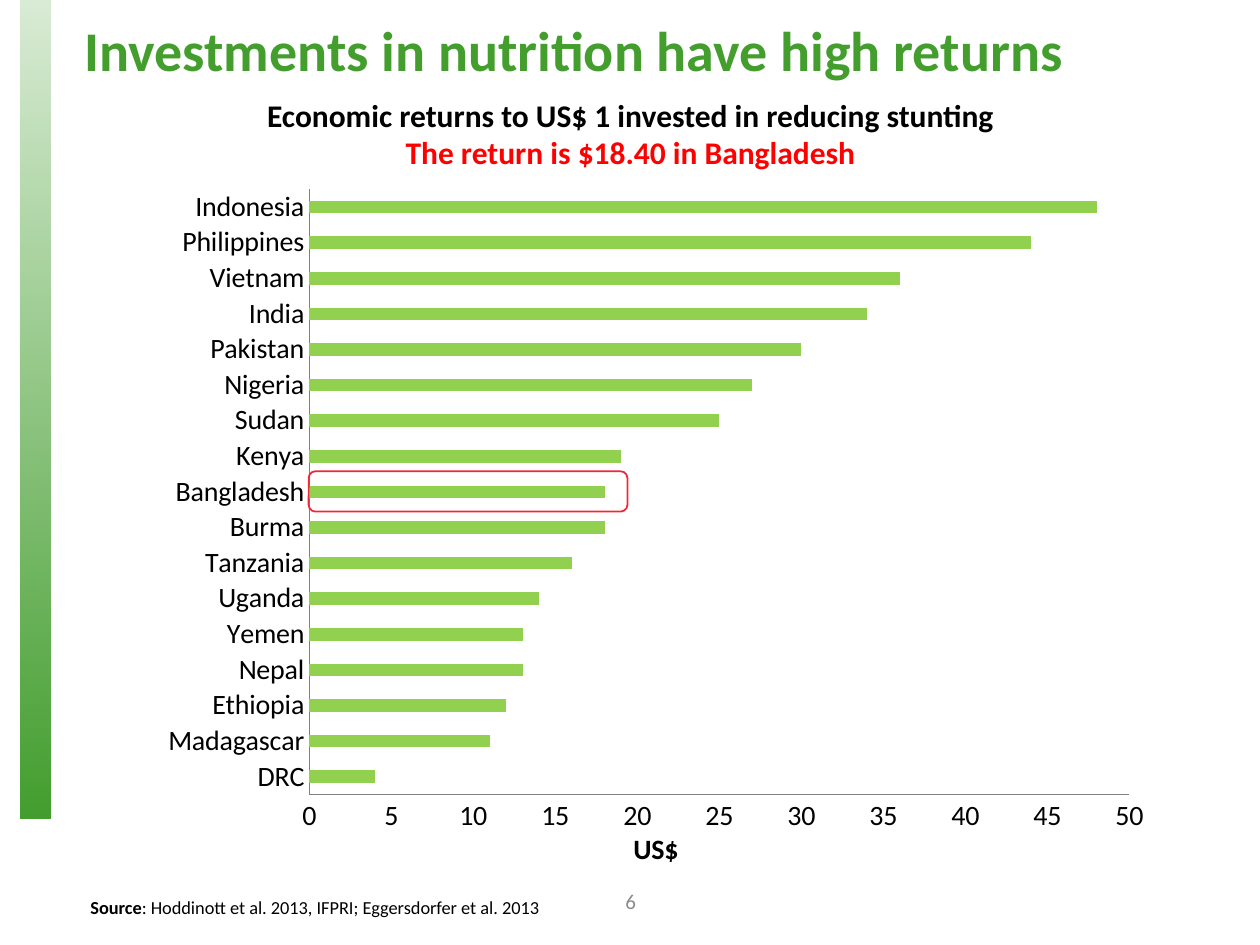
"""Build a slide on the economic returns to investing in nutrition."""
from lxml.etree import SubElement
from pptx import Presentation
from pptx.chart.data import CategoryChartData
from pptx.dml.color import RGBColor
from pptx.enum.chart import XL_CHART_TYPE, XL_TICK_MARK
from pptx.enum.shapes import MSO_SHAPE
from pptx.enum.text import MSO_ANCHOR, PP_ALIGN
from pptx.oxml import parse_xml
from pptx.oxml.ns import nsdecls, qn
from pptx.util import Inches, Pt

FONT = "Calibri"
COLORS = {name: RGBColor.from_string(value) for name, value in {
    "green": "439E2E", "bar": "92D050", "red": "FF0000", "outline": "EE283B",
    "black": "000000", "axis": "808080", "number": "8C8C8C"}.items()}

TITLE = "Investments in nutrition have high returns"
HEADINGS = [("Economic returns to US$ 1 invested in reducing stunting", "black"),
            ("The return is $18.40 in Bangladesh", "red")]
SOURCE = [("Source", True), (": Hoddinott et al. 2013, IFPRI; Eggersdorfer et al. 2013", False)]
PAGE_NUMBER = "6"
AXIS_TITLE = "US$"
RETURNS = {
    "DRC": 4, "Madagascar": 11, "Ethiopia": 12, "Nepal": 13, "Yemen": 13,
    "Uganda": 14, "Tanzania": 16, "Burma": 18, "Bangladesh": 18, "Kenya": 19,
    "Sudan": 25, "Nigeria": 27, "Pakistan": 30, "India": 34, "Vietnam": 36,
    "Philippines": 44, "Indonesia": 48}
PLOT = {"x": 0.204, "y": 0.041, "w": 0.757, "h": 0.846}


def box(*lengths):
    return [Inches(length) for length in lengths]


def style(font, size, color="black", bold=False):
    font.name, font.size, font.bold = FONT, Pt(size), bold
    font.color.rgb = COLORS[color]


def add_text(slide, *lengths):
    frame = slide.shapes.add_textbox(*box(*lengths)).text_frame
    frame.word_wrap = True
    return frame


def add_shape(slide, kind, *lengths):
    shape = slide.shapes.add_shape(kind, *box(*lengths))
    shape.shadow.inherit = False
    return shape


def add_side_band(slide):
    band = add_shape(slide, MSO_SHAPE.RECTANGLE, 0.16, 0, 0.24, 6.5)
    band.line.fill.background()
    band.fill.gradient()
    band.fill.gradient_angle = 270
    for stop in band.fill.gradient_stops:
        stop.color.rgb = COLORS["green"]
    faded = next(band.element.iter(qn("a:srgbClr")))
    SubElement(faded, qn("a:alpha")).set("val", "20000")


def add_title(slide):
    title = slide.shapes.title
    title.left, title.top, title.width, title.height = box(0.57, 0.27, 9.39, 0.79)
    frame = title.text_frame
    frame.text = TITLE
    frame.vertical_anchor = MSO_ANCHOR.MIDDLE
    frame.margin_bottom = Inches(0.54)
    paragraph = frame.paragraphs[0]
    paragraph.alignment = PP_ALIGN.LEFT
    paragraph.line_spacing = 0.9
    style(paragraph.font, 32, "green", True)


def add_returns_chart(slide):
    data = CategoryChartData()
    data.categories = list(RETURNS)
    data.add_series("Series 1", list(RETURNS.values()))
    chart = slide.shapes.add_chart(
        XL_CHART_TYPE.BAR_CLUSTERED, *box(0.7, 1.27, 8.6, 5.68), data).chart
    chart.has_legend = chart.has_title = False
    style(chart.font, 16)
    plot = chart.plots[0]
    plot.gap_width = 182
    plot.vary_by_categories = False
    fill = plot.series[0].format.fill
    fill.solid()
    fill.fore_color.rgb = COLORS["bar"]

    for axis in (chart.category_axis, chart.value_axis):
        axis.has_major_gridlines = False
        axis.major_tick_mark = axis.minor_tick_mark = XL_TICK_MARK.NONE
        axis.format.line.color.rgb = COLORS["axis"]
        axis.format.line.width = Pt(0.75)
        style(axis.tick_labels.font, 16)
    values = chart.value_axis
    values.minimum_scale, values.maximum_scale, values.major_unit = 0, 50, 5
    frame = values.axis_title.text_frame
    frame.text = AXIS_TITLE
    style(frame.paragraphs[0].font, 16, bold=True)

    area = chart.element.find(".//" + qn("c:plotArea"))
    for old in area.findall(qn("c:layout")):
        area.remove(old)
    modes = '<c:xMode val="edge"/><c:yMode val="edge"/>'
    shares = "".join(f'<c:{side} val="{share}"/>' for side, share in PLOT.items())
    area.insert(0, parse_xml(
        f'<c:layout {nsdecls("c")}><c:manualLayout><c:layoutTarget val="inner"/>'
        f'{modes}{shares}</c:manualLayout></c:layout>'))


def add_headings(slide):
    frame = add_text(slide, 1.58, 0.71, 6.85, 0.71)
    for index, (text, color) in enumerate(HEADINGS):
        paragraph = frame.add_paragraph() if index else frame.paragraphs[0]
        paragraph.text = text
        paragraph.alignment = PP_ALIGN.CENTER
        style(paragraph.font, 18, color, True)


def add_highlight(slide):
    highlight = add_shape(slide, MSO_SHAPE.ROUNDED_RECTANGLE, 2.45, 3.74, 2.53, 0.32)
    highlight.fill.background()
    highlight.line.color.rgb = COLORS["outline"]
    highlight.line.width = Pt(1)


def add_footer(slide):
    frame = add_text(slide, 3.88, 6.95, 2.25, 0.4)
    frame.vertical_anchor = MSO_ANCHOR.MIDDLE
    paragraph = frame.paragraphs[0]
    paragraph.text = PAGE_NUMBER
    paragraph.alignment = PP_ALIGN.CENTER
    style(paragraph.font, 12, "number")

    paragraph = add_text(slide, 0.62, 7.06, 7.27, 0.29).paragraphs[0]
    for text, bold in SOURCE:
        run = paragraph.add_run()
        run.text = text
        style(run.font, 10.5, bold=bold)


def main():
    presentation = Presentation()
    presentation.slide_width, presentation.slide_height = box(10, 7.5)
    slide = presentation.slides.add_slide(presentation.slide_layouts[5])
    for add_part in (add_side_band, add_title, add_returns_chart,
                     add_headings, add_highlight, add_footer):
        add_part(slide)
    presentation.save("out.pptx")


if __name__ == "__main__":
    main()
